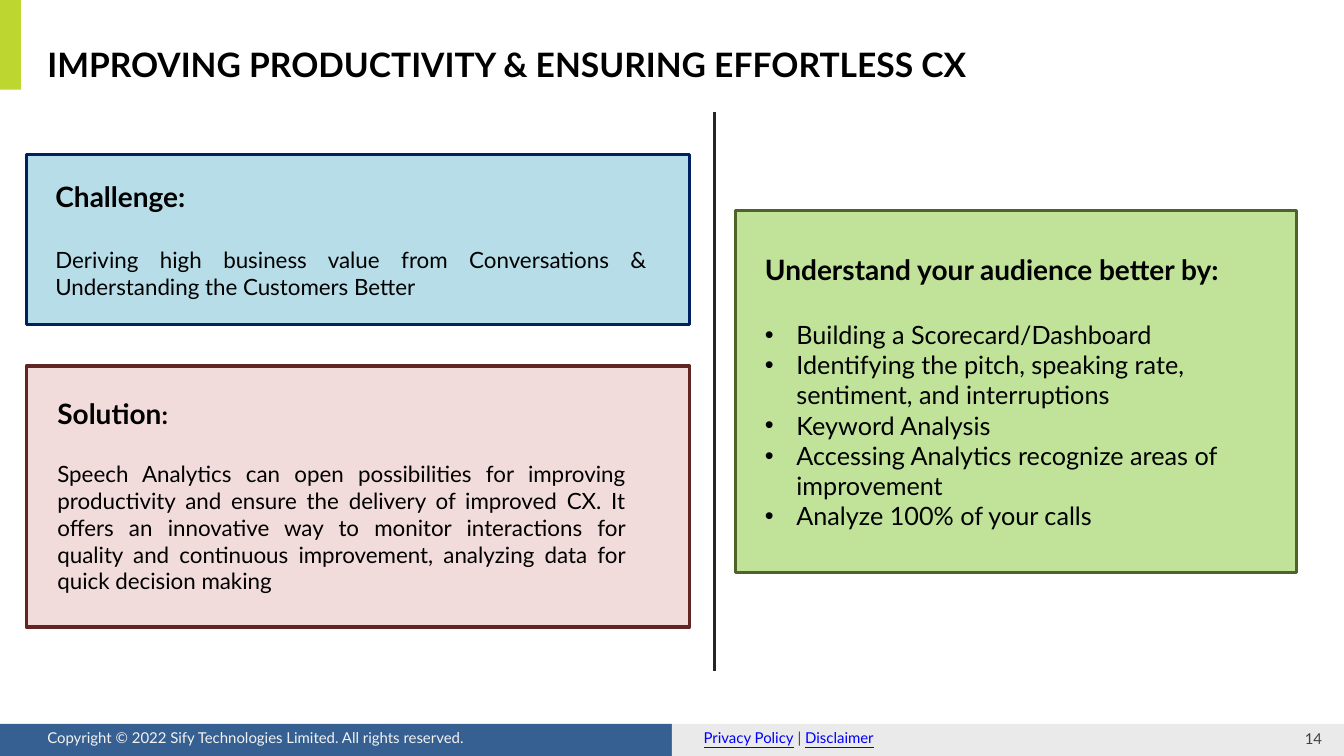
from dataclasses import dataclass

from lxml.etree import SubElement
from pptx import Presentation
from pptx.dml.color import RGBColor as RGB
from pptx.enum.shapes import MSO_CONNECTOR as CONN, MSO_SHAPE as SHAPE
from pptx.enum.text import MSO_ANCHOR as ANCHOR, MSO_AUTO_SIZE as FIT, PP_ALIGN as ALIGN
from pptx.oxml.ns import qn
from pptx.util import Pt


@dataclass(frozen=True)
class Theme:
    font: str = "Lato"
    title: float = 24
    heading: float = 20
    bullet: float = 18
    body: float = 16
    footer: float = 10.7
    ink: str = "000000"
    accent: str = "BED730"
    divider: str = "262626"
    footer_blue: str = "376092"
    footer_gray: str = "EAEAEA"
    footer_light: str = "F2F2F2"
    footer_dark: str = "404040"
    link: str = "0000FF"
    challenge: tuple = ("B7DEE8", "002060")
    solution: tuple = ("F2DCDB", "632523")
    audience: tuple = ("C0E399", "4F6228")


THEME = Theme()


def add_text(p, text, size, color=THEME.ink, bold=False, underline=False):
    r = p.add_run()
    r.text = text
    f = r.font
    f.name, f.size, f.bold, f.underline = THEME.font, Pt(size), bold, underline
    f.color.rgb = RGB.from_string(color)


class SlideBuilder:
    def __init__(self, slide, theme):
        self.slide, self.theme = slide, theme

    def frame(self, sp, anchor):
        tf = sp.text_frame
        tf.word_wrap, tf.auto_size, tf.vertical_anchor = True, FIT.NONE, anchor
        tf.margin_left = tf.margin_right = tf.margin_top = tf.margin_bottom = 0
        return tf

    def title(self, text, x, y, w, h):
        sp = self.slide.shapes.title
        sp.left, sp.top, sp.width, sp.height = map(Pt, (x, y, w, h))
        p = self.frame(sp, ANCHOR.MIDDLE).paragraphs[0]
        p.alignment = ALIGN.LEFT
        add_text(p, text, self.theme.title, bold=True)

    def rect(self, x, y, w, h, fill, line=None):
        sp = self.slide.shapes.add_shape(SHAPE.RECTANGLE, *map(Pt, (x, y, w, h)))
        sp.shadow.inherit = False
        sp.fill.solid()
        sp.fill.fore_color.rgb = RGB.from_string(fill)
        if line:
            sp.line.color.rgb = RGB.from_string(line)
            sp.line.width = Pt(2.25)
        else:
            sp.line.fill.background()

    def text_box(self, x, y, w, h, align=ALIGN.LEFT, anchor=ANCHOR.TOP):
        sp = self.slide.shapes.add_textbox(*map(Pt, (x, y, w, h)))
        tf = self.frame(sp, anchor)
        tf.paragraphs[0].alignment = align
        return tf

    def section(self, x, y, w, h, heading, body, gap, colon_size):
        tf = self.text_box(x, y, w, h, ALIGN.JUSTIFY)
        p = tf.paragraphs[0]
        add_text(p, heading, self.theme.heading, bold=True)
        add_text(p, ":", colon_size, bold=True)
        p = tf.add_paragraph()
        p.alignment, p.space_before = ALIGN.JUSTIFY, Pt(gap)
        add_text(p, body, self.theme.body)

    def bullet_list(self, x, y, w, h, heading, items, gap, indent):
        tf = self.text_box(x, y, w, h)
        add_text(tf.paragraphs[0], heading, self.theme.heading, bold=True)
        for i, item in enumerate(items):
            p = tf.add_paragraph()
            p.space_before = Pt(0 if i else gap)
            pPr = p._p.get_or_add_pPr()
            pPr.set("marL", str(Pt(indent)))
            pPr.set("indent", str(-Pt(indent)))
            SubElement(pPr, qn("a:buFont")).set("typeface", "Arial")
            SubElement(pPr, qn("a:buChar")).set("char", "•")
            add_text(p, item, self.theme.bullet)

    def line(self, x1, y1, x2, y2, color):
        cn = self.slide.shapes.add_connector(CONN.STRAIGHT, *map(Pt, (x1, y1, x2, y2)))
        cn.line.color.rgb = RGB.from_string(color)
        cn.line.width = Pt(2.25)
        SubElement(cn._element.spPr, qn("a:effectLst"))

    def footer(self, number):
        t = self.theme
        self.rect(0, 517, 480, 23, t.footer_blue)
        self.rect(480, 517, 480, 23, t.footer_gray)
        tf = self.text_box(33.8, 520.6, 394, 13)
        add_text(tf.paragraphs[0], "Copyright © 2022 Sify Technologies Limited. All rights reserved.",
                 t.footer, t.footer_light)
        p = self.text_box(502.6, 520.6, 303, 13).paragraphs[0]
        add_text(p, "Privacy Policy", t.footer, t.link, underline=True)
        add_text(p, " | ", t.footer, t.footer_dark)
        add_text(p, "Disclaimer", t.footer, t.link, underline=True)
        tf = self.text_box(920.9, 519.8, 34.6, 15, ALIGN.CENTER, ANCHOR.MIDDLE)
        add_text(tf.paragraphs[0], number, t.footer, t.footer_dark)


def main():
    prs = Presentation()
    prs.slide_width, prs.slide_height = Pt(960), Pt(540)
    t = THEME
    s = SlideBuilder(prs.slides.add_slide(prs.slide_layouts[5]), t)

    s.footer("14")
    s.rect(0, 0, 15, 64, t.accent)
    s.title("IMPROVING PRODUCTIVITY & ENSURING EFFORTLESS CX", 33.8, 28, 791, 36)

    s.rect(18.7, 110.2, 473.8, 121.7, *t.challenge)
    s.section(39.6, 128, 422.6, 87, "Challenge",
              "Deriving high business value from Conversations & Understanding the Customers Better",
              gap=24, colon_size=t.heading)

    s.rect(18.7, 261.4, 473.8, 186.5, *t.solution)
    s.section(41, 283, 406, 143, "Solution",
              "Speech Analytics can open possibilities for improving productivity and ensure the "
              "delivery of improved CX. It offers an innovative way to monitor interactions for "
              "quality and continuous improvement, analyzing data for quick decision making",
              gap=21.6, colon_size=t.bullet)

    s.line(510.5, 80, 510.5, 479.5, t.divider)

    s.rect(525.6, 150.2, 400.5, 258.5, *t.audience)
    s.bullet_list(546.4, 180, 371.5, 223, "Understand your audience better by:", [
        "Building a Scorecard/Dashboard",
        "Identifying the pitch, speaking rate, sentiment, and interruptions",
        "Keyword Analysis",
        "Accessing Analytics recognize areas of improvement",
        "Analyze 100% of your calls",
    ], gap=24, indent=22.5)

    prs.save("out.pptx")


if __name__ == "__main__":
    main()
